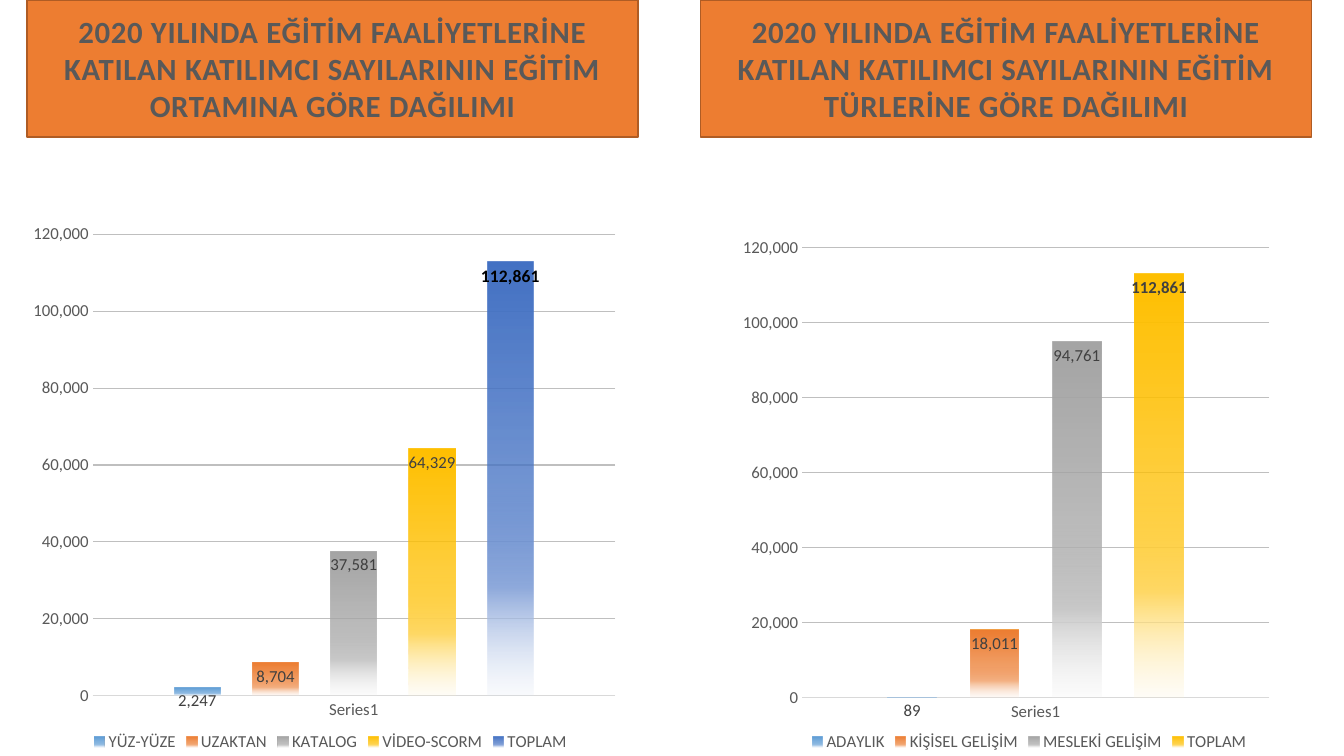
from dataclasses import dataclass

from lxml import etree
from pptx import Presentation
from pptx import util as u
from pptx.chart import data as chart_data
from pptx.dml.color import RGBColor
from pptx.enum import chart as chart_enum, shapes, text
from pptx.oxml import parse_xml
from pptx.oxml.ns import nsdecls, qn


@dataclass(frozen=True)
class Theme:
    font: str = "Calibri"
    title_size: float = 22
    chart_size: float = 12
    left_total_size: float = 12.5
    banner: str = "ED7D31"
    banner_edge: str = "AF5C24"
    muted: str = "595959"
    label: str = "404040"
    black: str = "000000"
    axis: str = "D9D9D9"
    grid: str = "BFBFBF"
    columns: tuple = (
        ("5B9BD5", "9DC3E6", "DEEBF7"),
        ("ED7D31", "F4B183", "FBE5D6"),
        ("A5A5A5", "C9C9C9", "EDEDED"),
        ("FFC000", "FFD966", "FFF2CC"),
        ("4472C4", "8FAADC", "DAE3F3"),
    )


class SlideBuilder:
    def __init__(self, slide, theme):
        self.slide = slide
        self.theme = theme

    def style_font(self, font, size, color, bold=False):
        font.name = self.theme.font
        font.size = u.Pt(size)
        font.bold = bold
        font.color.rgb = RGBColor.from_string(color)

    def style_line(self, line, color, width):
        line.color.rgb = RGBColor.from_string(color)
        line.width = u.Pt(width)

    def banner(self, box, wording):
        shape = self.slide.shapes.add_shape(shapes.MSO_SHAPE.RECTANGLE, *map(u.Inches, box))
        shape.shadow.inherit = False
        shape.fill.solid()
        shape.fill.fore_color.rgb = RGBColor.from_string(self.theme.banner)
        self.style_line(shape.line, self.theme.banner_edge, 1)
        frame = shape.text_frame
        frame.word_wrap = True
        frame.vertical_anchor = text.MSO_ANCHOR.MIDDLE
        paragraph = frame.paragraphs[0]
        paragraph.alignment = text.PP_ALIGN.CENTER
        run = paragraph.add_run()
        run.text = wording
        self.style_font(run.font, self.theme.title_size, self.theme.muted, True)
        run._r.get_or_add_rPr().set("spc", "50")

    def fade(self, series, colors):
        main, middle, pale = colors
        stops = ((0, main, 100), (51, main, 75), (75, middle, 100), (100, pale, 15))
        stop_xml = "".join(
            f'<a:gs pos="{position * 1000}"><a:srgbClr val="{color}">'
            f'<a:alpha val="{alpha * 1000}"/></a:srgbClr></a:gs>'
            for position, color, alpha in stops
        )
        series._element.get_or_add_spPr().insert(0, parse_xml(
            f'<a:gradFill {nsdecls("a")}><a:gsLst>{stop_xml}</a:gsLst>'
            '<a:lin ang="5400000" scaled="0"/></a:gradFill>'
        ))

    def place_plot(self, chart, plot_box):
        area = chart._chartSpace.chart.plotArea
        for old_layout in area.findall(qn("c:layout")):
            area.remove(old_layout)
        layout = parse_xml(f'<c:layout {nsdecls("c")}><c:manualLayout/></c:layout>')
        settings = [("layoutTarget", "inner"), ("xMode", "edge"), ("yMode", "edge")]
        settings += zip("xywh", plot_box)
        for name, value in settings:
            etree.SubElement(layout[0], qn(f"c:{name}")).set("val", str(value))
        area.insert(0, layout)

    def style_axes(self, chart):
        theme = self.theme
        for axis in (chart.category_axis, chart.value_axis):
            axis.major_tick_mark = axis.minor_tick_mark = chart_enum.XL_TICK_MARK.NONE
            self.style_font(axis.tick_labels.font, theme.chart_size, theme.muted)
        self.style_line(chart.category_axis.format.line, theme.axis, 0.75)
        value_axis = chart.value_axis
        value_axis.minimum_scale = 0
        value_axis.maximum_scale = 120000
        value_axis.major_unit = 20000
        value_axis.format.line.fill.background()
        self.style_line(value_axis.major_gridlines.format.line, theme.grid, 0.75)
        value_axis.tick_labels.number_format = "#,##0"
        value_axis.tick_labels.number_format_is_linked = False

    def column_chart(self, box, plot_box, participants, total_size, total_color):
        theme = self.theme
        source = chart_data.CategoryChartData(number_format="#,##0")
        source.categories = ["Series1"]
        for name, count in participants.items():
            source.add_series(name, [count])
        chart = self.slide.shapes.add_chart(
            chart_enum.XL_CHART_TYPE.COLUMN_CLUSTERED, *map(u.Inches, box), source
        ).chart
        self.style_font(chart.font, theme.chart_size, theme.muted)
        chart.has_title = False
        chart.has_legend = True
        chart.legend.position = chart_enum.XL_LEGEND_POSITION.BOTTOM
        chart.legend.include_in_layout = False
        self.style_font(chart.legend.font, theme.chart_size, theme.muted)
        self.style_axes(chart)
        self.place_plot(chart, plot_box)
        plot = chart.plots[0]
        plot.vary_by_categories = False
        plot.gap_width = 355
        plot.overlap = -70
        for series, colors in zip(plot.series, theme.columns):
            series.invert_if_negative = False
            self.fade(series, colors)
            labels = series.data_labels
            labels.show_value = True
            labels.position = chart_enum.XL_LABEL_POSITION.INSIDE_END
            labels.number_format = "#,##0"
            labels.number_format_is_linked = False
            if series.name == "TOPLAM":
                self.style_font(labels.font, total_size, total_color, True)
            else:
                self.style_font(labels.font, theme.chart_size, theme.label)


theme = Theme()
presentation = Presentation()
presentation.slide_width = u.Inches(13.33)
presentation.slide_height = u.Inches(7.5)
builder = SlideBuilder(presentation.slides.add_slide(presentation.slide_layouts[6]), theme)

builder.column_chart(
    (0, 1.55, 6.56, 5.95),
    (0.14, 0.13, 0.79, 0.77),
    {"YÜZ-YÜZE": 2247, "UZAKTAN": 8704, "KATALOG": 37581, "VİDEO-SCORM": 64329, "TOPLAM": 112861},
    theme.left_total_size,
    theme.black,
)
builder.column_chart(
    (7.08, 1.7, 6.26, 5.8),
    (0.14, 0.13, 0.74, 0.77),
    {"ADAYLIK": 89, "KİŞİSEL GELİŞİM": 18011, "MESLEKİ GELİŞİM": 94761, "TOPLAM": 112861},
    theme.chart_size,
    theme.label,
)
for left, grouping in ((0.27, "ORTAMINA"), (6.95, "TÜRLERİNE")):
    builder.banner(
        (left, 0, 6.06, 1.36),
        "2020 YILINDA EĞİTİM FAALİYETLERİNE KATILAN KATILIMCI SAYILARININ "
        f"EĞİTİM {grouping} GÖRE DAĞILIMI",
    )

presentation.save("out.pptx")
